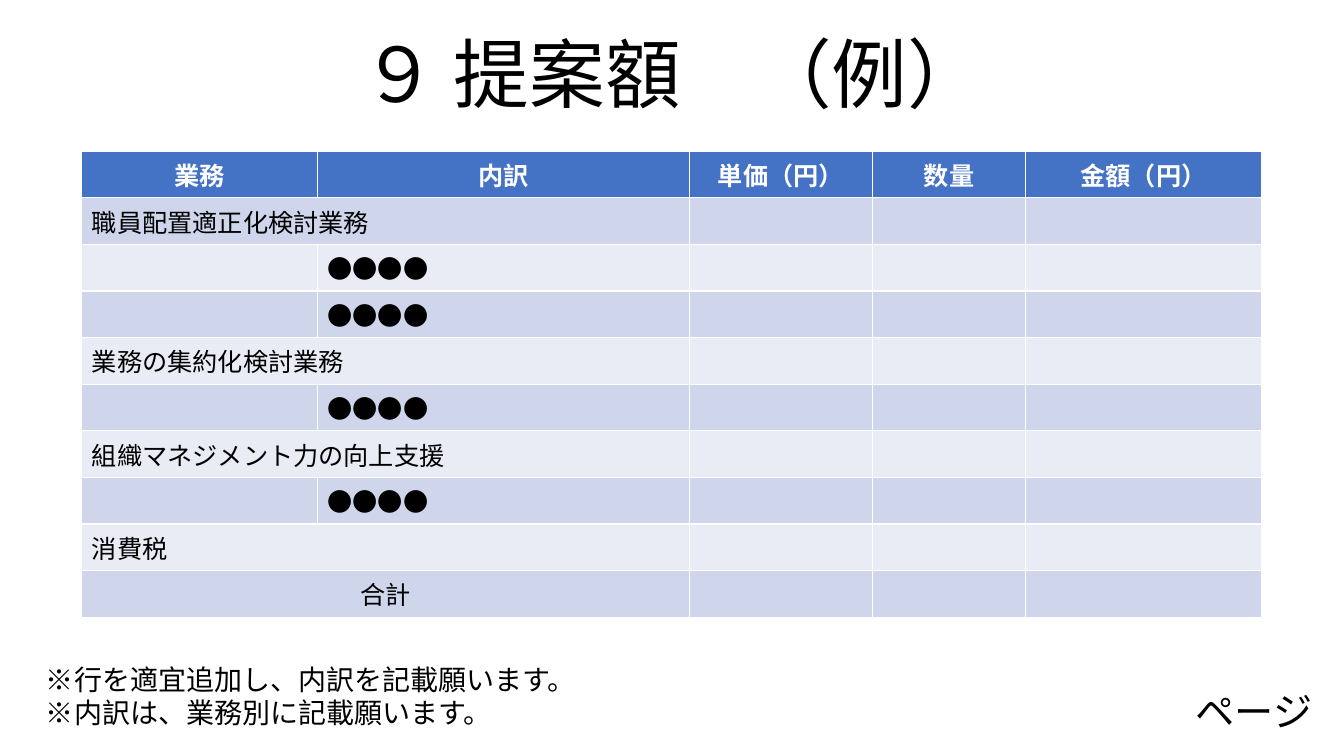
from lxml.etree import SubElement
from pptx import Presentation
from pptx.dml.color import RGBColor
from pptx.enum.text import MSO_ANCHOR, MSO_AUTO_SIZE, PP_ALIGN
from pptx.oxml.ns import qn
from pptx.util import Cm, Pt

FONT = "Noto Sans CJK JP"
BLACK, WHITE = "000000", "FFFFFF"
HEADER_FILL = "4472C4"
BAND_FILLS = ["E9EBF5", "CFD5EA"]

TITLE = "９ 提案額　（例）"
NOTES = ["※行を適宜追加し、内訳を記載願います。", "※内訳は、業務別に記載願います。"]
PAGE_LABEL = "ページ"

HEADERS = ["業務", "内訳", "単価（円）", "数量", "金額（円）"]
COLUMN_WIDTHS = [5.94, 9.37, 4.62, 3.86, 5.94]
ROW_HEIGHT = 1.17
DETAIL = "●●●●"
TOTAL = "合計"
# Every row except a detail row spans the first two columns.
ROWS = [
    "職員配置適正化検討業務", DETAIL, DETAIL,
    "業務の集約化検討業務", DETAIL,
    "組織マネジメント力の向上支援", DETAIL,
    "消費税", TOTAL,
]


def rgb(color):
    return RGBColor.from_string(color)


def write(tf, lines, size, align=PP_ALIGN.LEFT, color=BLACK, bold=False):
    tf.text = "\n".join(lines)
    for p in tf.paragraphs:
        p.alignment = align
        p.line_spacing = 1.0
        p.font.size = Pt(size)
        p.font.bold = bold
        p.font.color.rgb = rgb(color)
        p.font.name = FONT
        east_asian = SubElement(p._p.pPr.find(qn("a:defRPr")), qn("a:ea"))
        east_asian.set("typeface", FONT)


def add_text(slide, box, lines, size, align=PP_ALIGN.LEFT):
    tf = slide.shapes.add_textbox(*map(Cm, box)).text_frame
    tf.word_wrap = True
    write(tf, lines, size, align)


def add_title(slide):
    title = slide.shapes.title
    title.left, title.top, title.width, title.height = map(
        Cm, (2.87, 0.53, 28.14, 2.57))
    tf = title.text_frame
    tf.auto_size = MSO_AUTO_SIZE.NONE
    tf.vertical_anchor = MSO_ANCHOR.MIDDLE
    write(tf, [TITLE], 54, PP_ALIGN.CENTER)


def add_cost_table(slide):
    n_rows = len(ROWS) + 1
    box = (2.06, 3.81, sum(COLUMN_WIDTHS), ROW_HEIGHT * n_rows)
    table = slide.shapes.add_table(
        n_rows, len(HEADERS), *map(Cm, box)).table
    for column, width in zip(table.columns, COLUMN_WIDTHS):
        column.width = Cm(width)

    for r, row in enumerate(table.rows):
        row.height = Cm(ROW_HEIGHT)
        for cell in row.cells:
            cell.fill.solid()
            cell.fill.fore_color.rgb = rgb(BAND_FILLS[r % 2] if r else HEADER_FILL)

    for c, header in enumerate(HEADERS):
        write(table.cell(0, c).text_frame, [header], 18,
              PP_ALIGN.CENTER, WHITE, True)

    for r, label in enumerate(ROWS, 1):
        is_detail = label == DETAIL
        cell = table.cell(r, 1 if is_detail else 0)
        if not is_detail:
            cell.merge(table.cell(r, 1))
        align = PP_ALIGN.CENTER if label == TOTAL else PP_ALIGN.LEFT
        write(cell.text_frame, [label], 18, align)


def main():
    prs = Presentation()
    prs.slide_width, prs.slide_height = Cm(33.87), Cm(19.05)
    slide = prs.slides.add_slide(prs.slide_layouts[5])
    add_title(slide)
    add_cost_table(slide)
    add_text(slide, (0.91, 16.56, 32.03, 1.96), NOTES, 20)
    add_text(slide, (28.47, 17.2, 4.85, 1.45), [PAGE_LABEL], 28, PP_ALIGN.RIGHT)
    prs.save("out.pptx")


if __name__ == "__main__":
    main()
